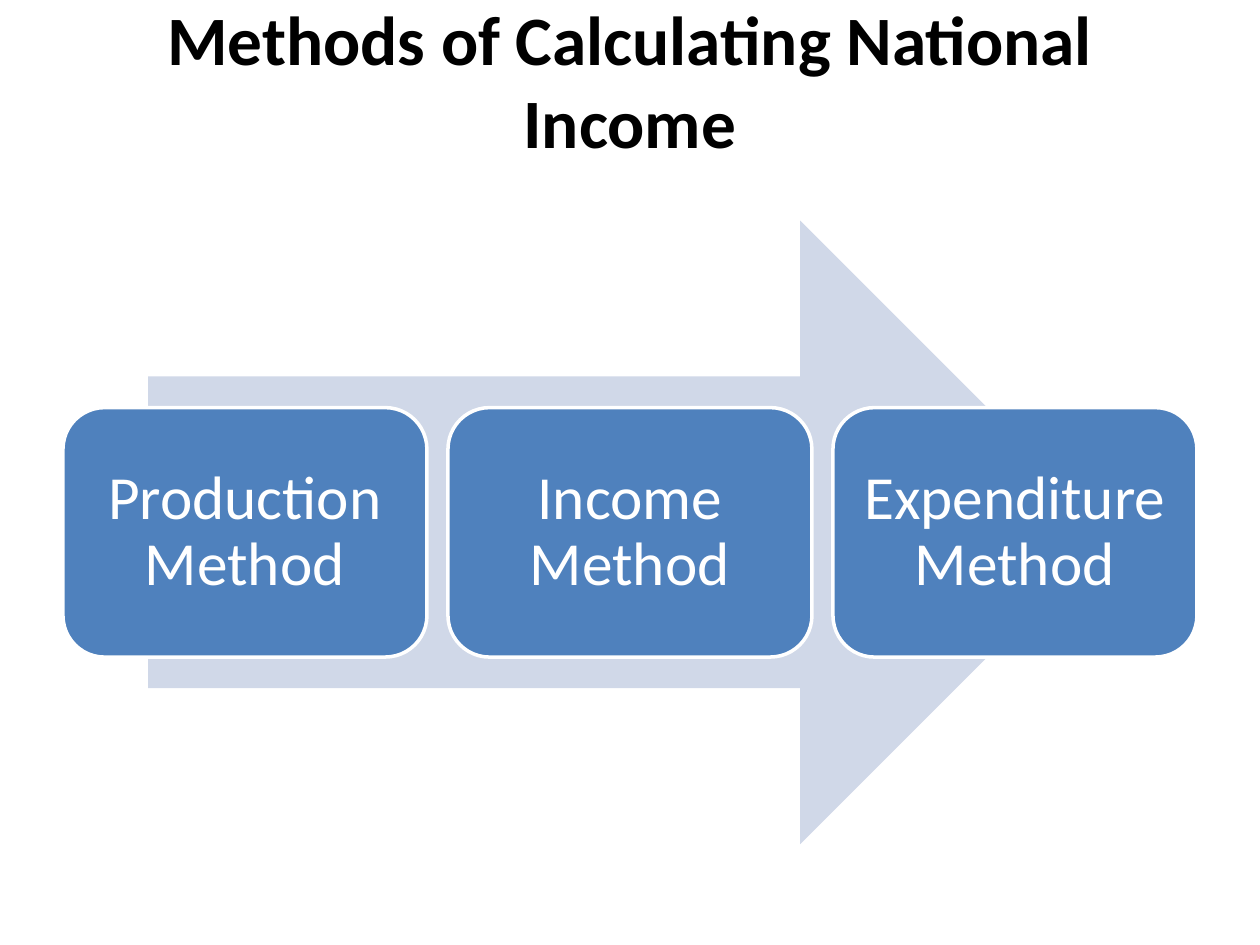
"""Build the slide on the methods of calculating national income."""
from pptx import Presentation
from pptx.dml.color import RGBColor
from pptx.enum import shapes, text
from pptx.util import Pt

TITLE = "Methods of Calculating National Income"
METHODS = ["Production Method", "Income Method", "Expenditure Method"]

BLACK = RGBColor(0x00, 0x00, 0x00)
WHITE = RGBColor(0xFF, 0xFF, 0xFF)
BLUE = RGBColor(0x4F, 0x81, 0xBD)
PALE_BLUE = RGBColor(0xD0, 0xD8, 0xE8)

PAGE_WIDTH, PAGE_HEIGHT = 720, 540
MARGIN = 36
CONTENT_WIDTH = PAGE_WIDTH - 2 * MARGIN
ARROW_WIDTH, ARROW_TOP, ARROW_HEIGHT = 550.8, 126, 356.4
BOX_WIDTH, BOX_HEIGHT = 208, 142.56


def write(shape, words, *, size, color, bold=False, spacing=1.0, insets):
    frame = shape.text_frame
    frame.word_wrap = True
    frame.vertical_anchor = text.MSO_ANCHOR.MIDDLE
    frame.margin_left, frame.margin_top, frame.margin_right, frame.margin_bottom = map(Pt, insets)
    para = frame.paragraphs[0]
    para.alignment = text.PP_ALIGN.CENTER
    para.line_spacing = spacing
    span = para.add_run()
    span.text = words
    span.font.name = "Calibri"
    span.font.size = Pt(size)
    span.font.bold = bold
    span.font.color.rgb = color


def add_filled(page, kind, left, top, width, height, color):
    shape = page.shapes.add_shape(kind, Pt(left), Pt(top), Pt(width), Pt(height))
    shape.shadow.inherit = False
    shape.fill.solid()
    shape.fill.fore_color.rgb = color
    shape.line.fill.background()
    return shape


def main():
    deck = Presentation()
    deck.slide_width, deck.slide_height = Pt(PAGE_WIDTH), Pt(PAGE_HEIGHT)
    page = deck.slides.add_slide(deck.slide_layouts[6])

    title = page.shapes.add_textbox(Pt(MARGIN), Pt(21.6), Pt(CONTENT_WIDTH), Pt(90))
    write(title, TITLE, size=39.6, color=BLACK, bold=True, insets=(7.2, 3.6, 7.2, 45.8))

    add_filled(page, shapes.MSO_SHAPE.RIGHT_ARROW, (PAGE_WIDTH - ARROW_WIDTH) / 2, ARROW_TOP,
               ARROW_WIDTH, ARROW_HEIGHT, PALE_BLUE)

    step = (CONTENT_WIDTH - BOX_WIDTH) / (len(METHODS) - 1)
    box_top = ARROW_TOP + (ARROW_HEIGHT - BOX_HEIGHT) / 2
    for index, method in enumerate(METHODS):
        box = add_filled(page, shapes.MSO_SHAPE.ROUNDED_RECTANGLE, MARGIN + index * step, box_top,
                         BOX_WIDTH, BOX_HEIGHT, BLUE)
        box.line.color.rgb = WHITE
        box.line.width = Pt(2)
        write(box, method, size=35, color=WHITE, spacing=0.9, insets=(10, 10, 10, 10))

    deck.save("out.pptx")


if __name__ == "__main__":
    main()
